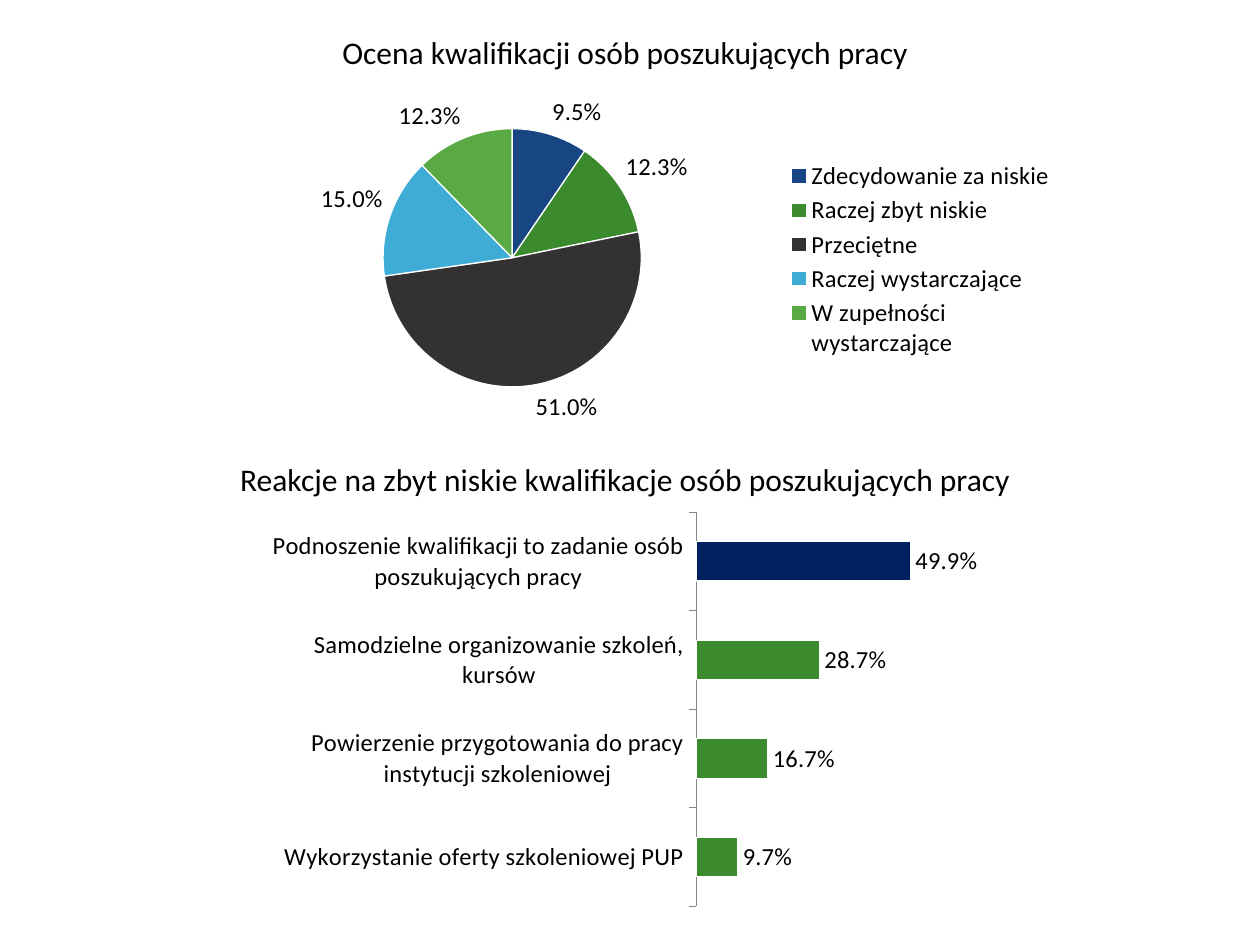
from lxml import etree
from pptx import Presentation
from pptx.chart.data import CategoryChartData
from pptx.dml.color import RGBColor
from pptx.enum.chart import XL_CHART_TYPE as Chart
from pptx.enum.chart import XL_LABEL_POSITION as LabelPos
from pptx.enum.chart import XL_LEGEND_POSITION as LegendPos
from pptx.enum.chart import XL_TICK_LABEL_POSITION as TickLabelPos
from pptx.enum.chart import XL_TICK_MARK as Tick
from pptx.enum.text import MSO_ANCHOR, PP_ALIGN
from pptx.oxml.ns import qn
from pptx.util import Cm, Pt

# Content
RATING_TITLE = "Ocena kwalifikacji osób poszukujących pracy"
RATINGS = [
    ("Zdecydowanie za niskie", 9.5, "navy"),
    ("Raczej zbyt niskie", 12.3, "green"),
    ("Przeciętne", 51.0, "charcoal"),
    ("Raczej wystarczające", 15.0, "sky"),
    ("W zupełności wystarczające", 12.3, "leaf"),
]
REACTION_TITLE = "Reakcje na zbyt niskie kwalifikacje osób poszukujących pracy"
REACTIONS = [
    ("Wykorzystanie oferty szkoleniowej PUP", 0.097, "green"),
    ("Powierzenie przygotowania do pracy instytucji szkoleniowej", 0.167, "green"),
    ("Samodzielne organizowanie szkoleń, kursów", 0.287, "green"),
    ("Podnoszenie kwalifikacji to zadanie osób poszukujących pracy", 0.499, "deep"),
]

COLORS = {
    "text": "000000", "white": "FFFFFF", "axis": "868686",
    "navy": "184683", "green": "3C8A2E", "charcoal": "333131",
    "sky": "3FACD6", "leaf": "59AA44", "deep": "002060",
}
FONT = "Calibri"


def rgb(name):
    return RGBColor.from_string(COLORS[name])


def place(sp, left, top, width, height):
    sp.left, sp.top, sp.width, sp.height = map(Cm, (left, top, width, height))


def write(sp, text, size=18, color="text", wrap=True):
    tf = sp.text_frame
    tf.word_wrap = wrap
    tf.vertical_anchor = MSO_ANCHOR.MIDDLE
    p = tf.paragraphs[0]
    p.alignment = PP_ALIGN.CENTER
    r = p.add_run()
    r.text = text
    r.font.size, r.font.name = Pt(size), FONT
    r.font.color.rgb = rgb(color)


def set_layout(parent, x, y, w, h, inner=False):
    """Fix a plot area or legend at fractions of the chart."""
    for old in parent.findall(qn("c:layout")):
        parent.remove(old)
    layout = etree.Element(qn("c:layout"))
    manual = etree.SubElement(layout, qn("c:manualLayout"))
    values = [("layoutTarget", "inner")] if inner else []
    values += [("xMode", "edge"), ("yMode", "edge"),
               ("x", x), ("y", y), ("w", w), ("h", h)]
    for tag, value in values:
        etree.SubElement(manual, qn("c:" + tag)).set("val", str(value))
    position = parent.find(qn("c:legendPos"))
    parent.insert(0 if position is None else 1, layout)


def add_chart(s, kind, rows, box, plot_box, number_format):
    data = CategoryChartData()
    data.categories = [label for label, _, _ in rows]
    data.add_series("Series 1", [value for _, value, _ in rows])
    chart = s.shapes.add_chart(kind, *map(Cm, box), data).chart
    chart.has_title = chart.has_legend = False
    chart.font.size, chart.font.name = Pt(14), FONT
    chart.font.color.rgb = rgb("text")
    plot = chart.plots[0]
    plot.vary_by_categories = kind == Chart.PIE
    for i, (_, _, color) in enumerate(rows):
        fmt = plot.series[0].points[i].format
        fmt.fill.solid()
        fmt.fill.fore_color.rgb = rgb(color)
        fmt.line.color.rgb = rgb("white")
        fmt.line.width = Pt(0.75)
    plot.has_data_labels = True
    labels = plot.data_labels
    labels.show_value = True
    labels.show_percentage = False
    labels.number_format = number_format
    labels.number_format_is_linked = False
    labels.position = LabelPos.OUTSIDE_END
    set_layout(chart.element.find(".//" + qn("c:plotArea")), *plot_box, inner=True)
    return chart


prs = Presentation()
prs.slide_width, prs.slide_height = Cm(25.4), Cm(19.05)
s = prs.slides.add_slide(prs.slide_layouts[5])

# Rating: title and pie chart
place(s.shapes.title, 6.58, 0.53, 12.04, 1.02)
write(s.shapes.title, RATING_TITLE, wrap=False)

pie = add_chart(s, Chart.PIE, RATINGS, (4.7, 1.55, 16.79, 7.37),
                (0.18, 0.14, 0.31, 0.71), '0.0"%"')
pie.has_legend = True
pie.legend.position = LegendPos.RIGHT
pie.legend.include_in_layout = False
set_layout(pie.legend._element, 0.66, 0.22, 0.33, 0.56)

# Reactions: bar chart and heading
bar = add_chart(s, Chart.BAR_CLUSTERED, REACTIONS, (5.38, 10.16, 14.43, 8.28),
                (0.6, 0.02, 0.36, 0.96), "0.0%")
bar.plots[0].gap_width = 150
categories, values = bar.category_axis, bar.value_axis
categories.has_major_gridlines = values.has_major_gridlines = False
categories.major_tick_mark = Tick.OUTSIDE
categories.minor_tick_mark = Tick.NONE
categories.tick_label_position = TickLabelPos.NEXT_TO_AXIS
categories.format.line.color.rgb = rgb("axis")
values.visible = False
values.minimum_scale, values.maximum_scale = 0, 0.6

heading = s.shapes.add_textbox(Cm(4.5), Cm(9.14), Cm(16.21), Cm(1.02))
write(heading, REACTION_TITLE)

prs.save("out.pptx")
